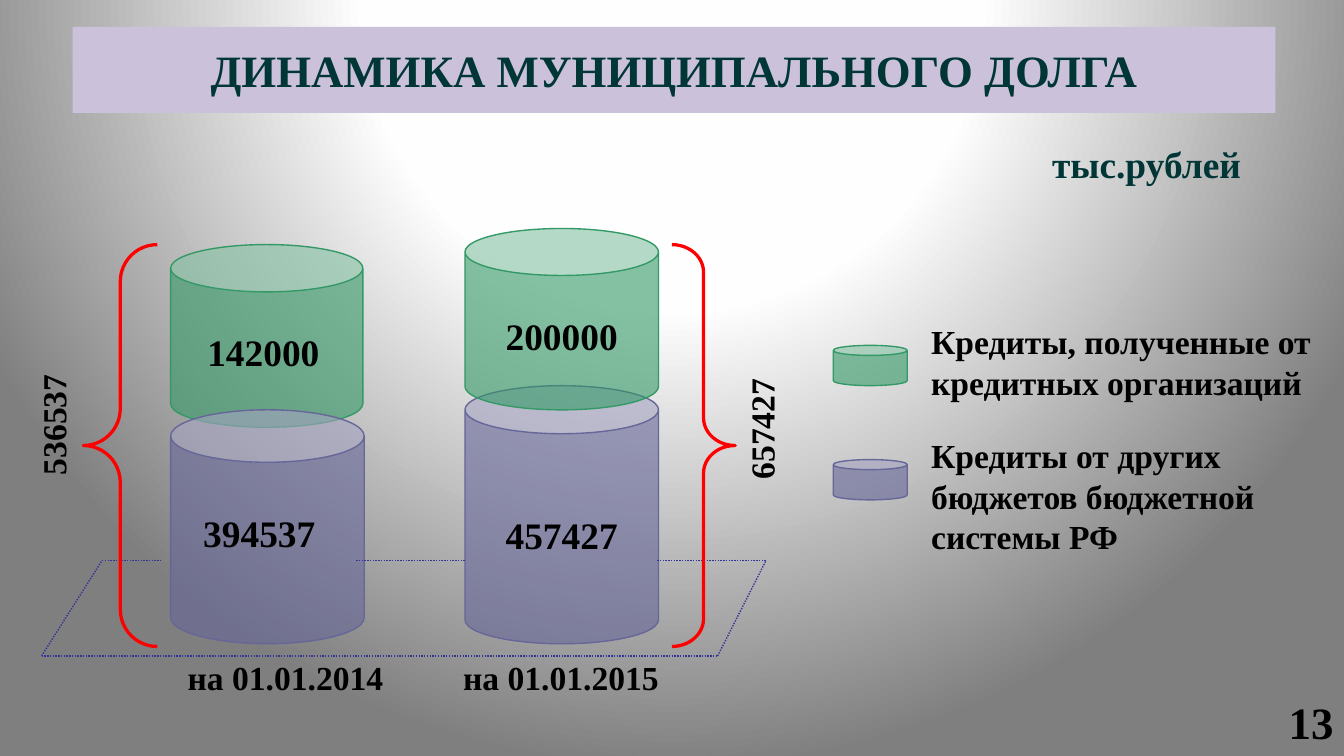
from dataclasses import dataclass

from lxml import etree
from pptx import Presentation
from pptx.dml.color import RGBColor
from pptx.enum.dml import MSO_LINE
from pptx.enum.shapes import MSO_CONNECTOR, MSO_SHAPE
from pptx.enum.text import MSO_ANCHOR, MSO_AUTO_SIZE, PP_ALIGN
from pptx.oxml import parse_xml
from pptx.oxml.ns import nsdecls, qn
from pptx.util import Inches, Pt

FONT = "Times New Roman"
BLACK = RGBColor(0x00, 0x00, 0x00)
TEAL = RGBColor(0x00, 0x36, 0x35)
LILAC = RGBColor(0xCC, 0xC1, 0xDA)
GREEN = RGBColor(0x33, 0x99, 0x66)
PURPLE = RGBColor(0x66, 0x66, 0x99)
BLUE = RGBColor(0x33, 0x33, 0x99)
RED = RGBColor(0xFF, 0x00, 0x00)
LEFT, CENTER = PP_ALIGN.LEFT, PP_ALIGN.CENTER

BACKGROUND = f"""<p:bg {nsdecls('p', 'a')}><p:bgPr><a:gradFill rotWithShape="1"><a:gsLst>
<a:gs pos="0"><a:srgbClr val="FFFFFF"/></a:gs>
<a:gs pos="40000"><a:srgbClr val="FEFEFE"/></a:gs>
<a:gs pos="100000"><a:srgbClr val="7F7F7F"/></a:gs></a:gsLst>
<a:path path="circle"><a:fillToRect l="50000" t="-80000" r="50000" b="180000"/></a:path>
</a:gradFill><a:effectLst/></p:bgPr></p:bg>"""


@dataclass
class Box:
    left: float
    top: float
    width: float
    height: float

    def lengths(self) -> list:
        return [Inches(v) for v in (self.left, self.top, self.width, self.height)]


@dataclass
class Can:
    box: Box
    color: RGBColor
    adj: float = 0.25


@dataclass
class Label:
    box: Box
    lines: tuple[str, ...]
    size: int = 18
    align: PP_ALIGN = LEFT
    color: RGBColor = BLACK
    rotation: int = 0
    wrap: bool = True


@dataclass
class Brace:
    kind: MSO_SHAPE
    box: Box
    adj: float


def write(tf, lines: tuple[str, ...], size: int, align: PP_ALIGN, color: RGBColor) -> None:
    font_format = {"name": FONT, "size": Pt(size), "bold": True}
    for i, line in enumerate(lines):
        p = tf.paragraphs[0] if i == 0 else tf.add_paragraph()
        p.alignment = align
        r = p.add_run()
        r.text = line
        for name, value in font_format.items():
            setattr(r.font, name, value)
        r.font.color.rgb = color


def add_title(s, text: str) -> None:
    sp = s.shapes.title
    box = Box(0.54, 0.2, 8.95, 0.64)
    for name, value in zip(("left", "top", "width", "height"), box.lengths()):
        setattr(sp, name, value)
    sp.fill.solid()
    sp.fill.fore_color.rgb = LILAC
    tf = sp.text_frame
    tf.auto_size = MSO_AUTO_SIZE.NONE
    tf.vertical_anchor = MSO_ANCHOR.MIDDLE
    write(tf, (text,), 24, CENTER, TEAL)


def add_label(s, label: Label) -> None:
    sp = s.shapes.add_textbox(*label.box.lengths())
    sp.rotation = label.rotation
    tf = sp.text_frame
    tf.word_wrap = label.wrap
    tf.auto_size = MSO_AUTO_SIZE.SHAPE_TO_FIT_TEXT
    write(tf, label.lines, label.size, label.align, label.color)


def add_can(s, can: Can) -> None:
    sp = s.shapes.add_shape(MSO_SHAPE.CAN, *can.box.lengths())
    sp.shadow.inherit = False
    sp.adjustments[0] = can.adj
    sp.fill.solid()
    sp.fill.fore_color.rgb = can.color
    # 60% opacity
    clr = sp._element.spPr.find(qn("a:solidFill"))[0]
    etree.SubElement(clr, qn("a:alpha")).set("val", "60000")
    sp.line.color.rgb = can.color
    sp.line.width = Pt(0.75)


def add_brace(s, brace: Brace) -> None:
    sp = s.shapes.add_shape(brace.kind, *brace.box.lengths())
    sp.shadow.inherit = False
    sp.adjustments[0] = brace.adj
    sp.adjustments[1] = 0.5
    sp.fill.background()
    sp.line.color.rgb = RED
    sp.line.width = Pt(1.75)


def add_dotted_line(s, x1: float, y1: float, x2: float, y2: float) -> None:
    line = s.shapes.add_connector(
        MSO_CONNECTOR.STRAIGHT, *(Inches(v) for v in (x1, y1, x2, y2)))
    line.line.color.rgb = BLUE
    line.line.width = Pt(0.75)
    line.line.dash_style = MSO_LINE.ROUND_DOT
    etree.SubElement(line._element.spPr, qn("a:effectLst"))


# Legend keys, then columns from back to front
CANS = [
    Can(Box(6.2, 2.57, 0.55, 0.3), GREEN),
    Can(Box(6.2, 3.42, 0.55, 0.3), PURPLE),
    Can(Box(1.27, 1.82, 1.43, 1.36), GREEN, 0.259),
    Can(Box(1.27, 3.05, 1.44, 1.74), PURPLE, 0.271),
    Can(Box(3.46, 2.87, 1.44, 1.92), PURPLE, 0.248),
    Can(Box(3.46, 1.7, 1.44, 1.35), GREEN, 0.259),
]

# Floor outline, broken where the columns stand
FRONT, BACK = 4.88, 4.17
FLOOR = [
    (0.31, FRONT, 5.34, FRONT),
    (0.31, FRONT, 0.76, BACK),
    (0.76, BACK, 1.21, BACK),
    (2.65, BACK, 3.46, BACK),
    (4.89, BACK, 5.7, BACK),
    (5.34, FRONT, 5.7, BACK),
]

BRACES = [
    Brace(MSO_SHAPE.LEFT_BRACE, Box(0.62, 1.82, 0.55, 2.99), 0.499),
    Brace(MSO_SHAPE.RIGHT_BRACE, Box(5, 1.82, 0.47, 2.99), 0.436),
]

LABELS = [
    # Dates
    Label(Box(1.26, 4.84, 1.73, 0.4), ("на 01.01.2014",), align=CENTER),
    Label(Box(3.31, 4.84, 1.73, 0.4), ("на 01.01.2015",), align=CENTER),
    # Legend
    Label(Box(6.83, 2.34, 3.12, 0.71),
          ("Кредиты, полученные от", "кредитных организаций"), wrap=False),
    Label(Box(6.83, 3.19, 2.7, 1.01),
          ("Кредиты от других", "бюджетов бюджетной", "системы РФ"), wrap=False),
    # Unit
    Label(Box(7.73, 1, 1.77, 0.44), ("тыс.рублей",), 20, color=TEAL),
    # Column values
    Label(Box(1.33, 2.4, 1.26, 0.44), ("142000",), 20, CENTER),
    Label(Box(1.21, 3.75, 1.44, 0.44), ("394537",), 20, CENTER),
    Label(Box(3.46, 3.76, 1.44, 0.44), ("457427",), 20, CENTER),
    Label(Box(3.46, 2.28, 1.44, 0.44), ("200000",), 20, CENTER),
    # Totals beside the braces
    Label(Box(-0.28, 2.76, 1.35, 0.4), ("536537",), rotation=270),
    Label(Box(5.05, 2.85, 1.23, 0.4), ("657427",), rotation=270),
    # Slide number
    Label(Box(9.49, 5.12, 0.54, 0.5), ("13",), 24, wrap=False),
]


def main() -> None:
    prs = Presentation()
    # 16:9 slide
    prs.slide_width = Inches(10)
    prs.slide_height = Inches(10 * 9 / 16)
    s = prs.slides.add_slide(prs.slide_layouts[5])
    s._element.cSld.insert(0, parse_xml(BACKGROUND))

    add_title(s, "ДИНАМИКА МУНИЦИПАЛЬНОГО ДОЛГА")
    for can in CANS:
        add_can(s, can)
    for ends in FLOOR:
        add_dotted_line(s, *ends)
    for brace in BRACES:
        add_brace(s, brace)
    for label in LABELS:
        add_label(s, label)
    prs.save("out.pptx")


if __name__ == "__main__":
    main()
